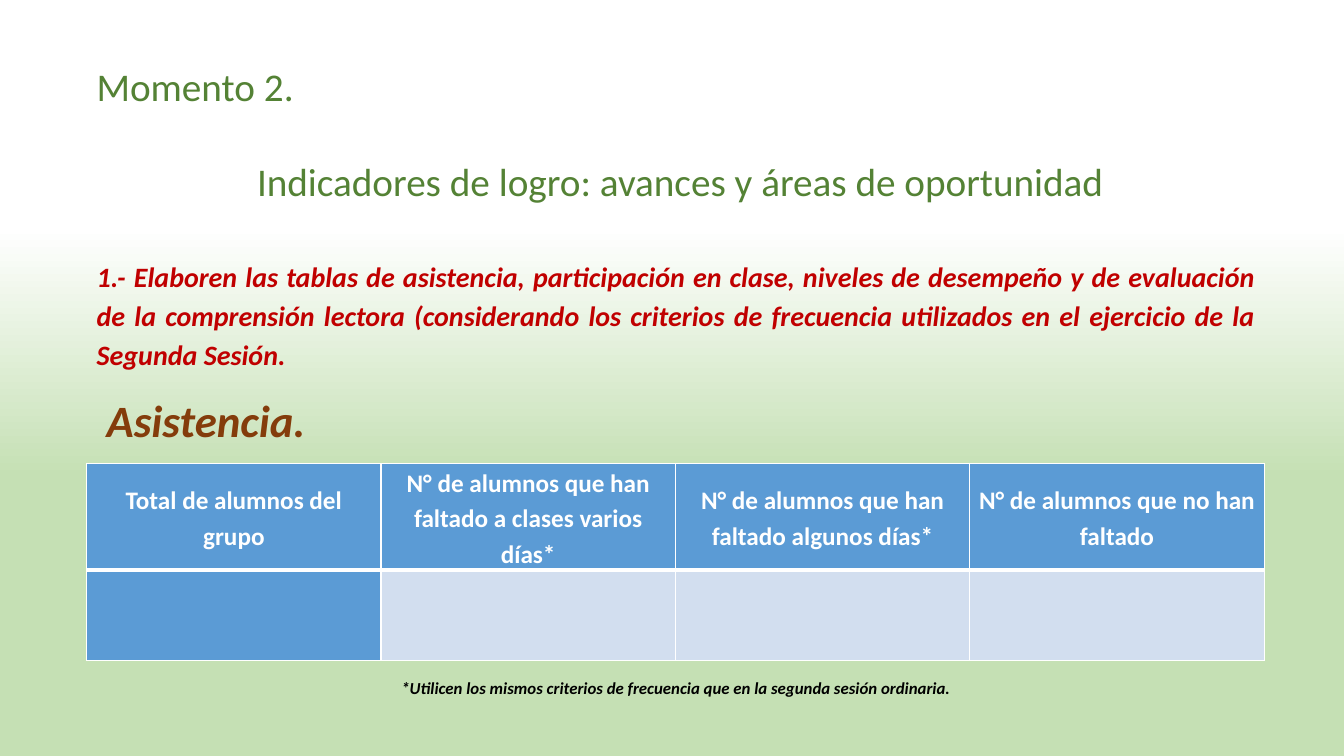
from dataclasses import dataclass

from lxml.etree import SubElement
from pptx import Presentation
from pptx.dml.color import RGBColor
from pptx.enum.text import MSO_ANCHOR, MSO_AUTO_SIZE, PP_ALIGN as Align
from pptx.oxml.ns import qn
from pptx.util import Pt

EMU_PER_PX = 9144  # 100 px to the inch
FONT = "Calibri"
WHITE, BLACK = "FFFFFF", "000000"
PALE_GREEN, GREEN = "C5E0B4", "548235"
RED, BROWN = "C00000", "843C0B"
BLUE, PALE_BLUE = "5B9BD5", "D2DEEF"


@dataclass(frozen=True)
class Para:
    text: str
    size: int
    color: str
    bold: bool = False
    italic: bool = False
    align: Align = Align.LEFT
    line_spacing: float = 1.0
    before: int = 0
    after: int = 0
    indent: int = 0


@dataclass(frozen=True)
class TextBox:
    left: int
    top: int
    width: int
    height: int
    paras: tuple[Para, ...]


TEXT_BOXES = (
    TextBox(86, 57, 1169, 152, (
        Para("Momento 2.", 28, GREEN),
        Para("Indicadores de logro: avances y áreas de oportunidad", 28, GREEN,
             align=Align.CENTER, before=34, indent=8),
    )),
    TextBox(86, 248, 1169, 202, (
        Para("1.- Elaboren las tablas de asistencia, participación en clase, "
             "niveles de desempeño y de evaluación de la comprensión lectora "
             "(considerando los criterios de frecuencia utilizados en el "
             "ejercicio de la Segunda Sesión.", 20, RED, True, True,
             Align.JUSTIFY, 1.15, after=10),
        Para("Asistencia.", 32, BROWN, True, True,
             line_spacing=1.15, after=10, indent=10),
    )),
    TextBox(43, 664, 1255, 32, (
        Para("*Utilicen los mismos criterios de frecuencia que en la segunda "
             "sesión ordinaria.", 12, BLACK, True, True,
             Align.CENTER, 1.15, after=10),
    )),
)

HEADERS = (
    "Total de alumnos del grupo",
    "N° de alumnos que han faltado a clases varios días*",
    "N° de alumnos que han faltado algunos días*",
    "N° de alumnos que no han faltado",
)
TABLE_LEFT, TABLE_TOP, COLUMN_WIDTH = 86, 460, 292
HEADER_HEIGHT, ANSWER_HEIGHT = 103, 90
THIN, THICK = 1, 3


def px(n: int) -> int:
    return n * EMU_PER_PX


def rgb(color: str) -> RGBColor:
    return RGBColor.from_string(color)


def write_para(p, para: Para) -> None:
    p.text = para.text
    p.alignment = para.align
    p.line_spacing = para.line_spacing
    p.space_before, p.space_after = Pt(para.before), Pt(para.after)
    p.font.name, p.font.size = FONT, Pt(para.size)
    p.font.bold, p.font.italic = para.bold, para.italic
    p.font.color.rgb = rgb(para.color)
    if para.indent:
        p._p.get_or_add_pPr().set("marL", str(px(para.indent)))


def add_text_box(slide, box: TextBox) -> None:
    sp = slide.shapes.add_textbox(px(box.left), px(box.top),
                                  px(box.width), px(box.height))
    tf = sp.text_frame
    tf.word_wrap = True
    tf.auto_size = MSO_AUTO_SIZE.NONE
    for i, para in enumerate(box.paras):
        write_para(tf.add_paragraph() if i else tf.paragraphs[0], para)


def style_cell(cell, fill: str, top: int, bottom: int) -> None:
    """Set white borders, top and bottom widths in points, then the fill."""
    tc_pr = cell._tc.get_or_add_tcPr()
    widths = {"a:lnL": THIN, "a:lnR": THIN, "a:lnT": top, "a:lnB": bottom}
    for tag, width in widths.items():
        ln = SubElement(tc_pr, qn(tag), w=str(Pt(width)))
        SubElement(SubElement(ln, qn("a:solidFill")), qn("a:srgbClr"), val=WHITE)
    cell.fill.solid()
    cell.fill.fore_color.rgb = rgb(fill)


def add_attendance_table(slide) -> None:
    table = slide.shapes.add_table(
        2, len(HEADERS), px(TABLE_LEFT), px(TABLE_TOP),
        px(COLUMN_WIDTH * len(HEADERS)), px(HEADER_HEIGHT + ANSWER_HEIGHT)).table
    table.first_col = True
    table.rows[0].height = px(HEADER_HEIGHT)
    table.rows[1].height = px(ANSWER_HEIGHT)
    for col, header in enumerate(HEADERS):
        table.columns[col].width = px(COLUMN_WIDTH)
        cell = table.cell(0, col)
        style_cell(cell, BLUE, THIN, THICK)
        cell.vertical_anchor = MSO_ANCHOR.MIDDLE
        cell.margin_left = cell.margin_right = px(7)
        cell.margin_top = cell.margin_bottom = 0
        write_para(cell.text_frame.paragraphs[0],
                   Para(header, 18, WHITE, bold=True, align=Align.CENTER,
                        line_spacing=1.15))
        style_cell(table.cell(1, col), PALE_BLUE if col else BLUE, THICK, THIN)


def paint_background(slide) -> None:
    fill = slide.background.fill
    fill.gradient()
    fill.gradient_angle = 270
    for stop, (position, color) in zip(fill.gradient_stops,
                                       ((0.30, WHITE), (0.63, PALE_GREEN))):
        stop.position = position
        stop.color.rgb = rgb(color)


def main() -> None:
    prs = Presentation()
    prs.slide_width, prs.slide_height = px(1333), px(750)
    slide = prs.slides.add_slide(prs.slide_layouts[6])
    paint_background(slide)
    for box in TEXT_BOXES:
        add_text_box(slide, box)
    add_attendance_table(slide)
    prs.save("out.pptx")


if __name__ == "__main__":
    main()
